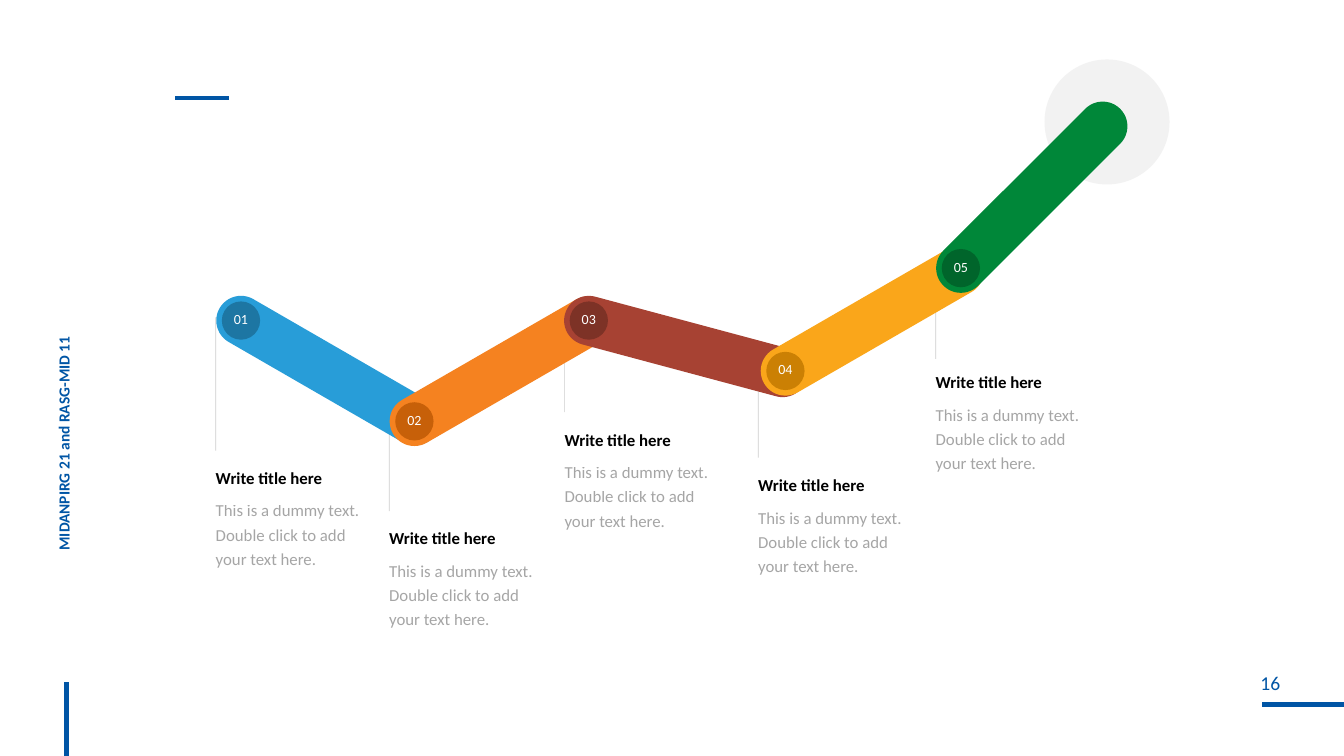
from dataclasses import dataclass
from math import cos, radians, sin

from lxml.etree import SubElement
from pptx import Presentation
from pptx.dml.color import RGBColor
from pptx.enum.shapes import MSO_CONNECTOR, MSO_SHAPE
from pptx.enum.text import MSO_ANCHOR, MSO_AUTO_SIZE, PP_ALIGN
from pptx.oxml.ns import qn
from pptx.util import Inches, Pt


@dataclass(frozen=True)
class Theme:
    font: str = "Calibri"
    brand: str = "0055A5"
    ink: str = "000000"
    muted: str = "808080"
    halo: str = "F2F2F2"
    white: str = "FFFFFF"
    number_size: int = 14
    label_size: int = 12
    side_size: int = 11
    badge_size: int = 10
    rule_width: float = 3
    stem_width: float = 0.5


@dataclass(frozen=True)
class Step:
    x: float  # centre of the joint
    y: float
    angle: int  # direction of the bar, clockwise degrees
    fill: str
    badge: str
    label_x: float
    label_y: float
    stem: float  # length of the line above the label
    gap: float = 0.08  # between that line and the label


THEME = Theme()
BAR_LENGTH, BAR_WIDTH = 1.99, 0.49
BADGE = 0.38
TITLE = "Write title here"
BODY = "This is a dummy text. Double click to add your text here."

STEPS = [
    Step(2.39, 3.18, 30, "289DD8", "1D76A3", 2.14, 4.55, 1.32),
    Step(4.11, 4.18, -30, "F58220", "C76009", 3.86, 5.15, 0.96),
    Step(5.84, 3.18, 15, "A74233", "7D3226", 5.6, 4.17, 0.96),
    Step(7.79, 3.68, -30, "FAA61A", "CB8004", 7.52, 4.62, 0.96),
    Step(9.53, 2.66, -45, "008739", "00652B", 9.28, 3.6, 0.96, 0.04),
]


def set_alpha(element, percent):
    """Make the solid colour inside an element partly transparent."""
    color = next(element.iter(qn("a:srgbClr")))
    SubElement(color, qn("a:alpha")).set("val", str(percent * 1000))


def add_line(s, x1, y1, x2, y2, color, width, alpha=None):
    line = s.shapes.add_connector(
        MSO_CONNECTOR.STRAIGHT, Inches(x1), Inches(y1), Inches(x2), Inches(y2))
    line.line.color.rgb = RGBColor.from_string(color)
    line.line.width = Pt(width)
    if alpha:
        set_alpha(line.line._ln, alpha)
    SubElement(line._element.spPr, qn("a:effectLst"))


def add_solid(s, kind, cx, cy, w, h, color):
    """Place a plain filled shape by its centre."""
    sp = s.shapes.add_shape(
        kind, Inches(cx - w / 2), Inches(cy - h / 2), Inches(w), Inches(h))
    sp.shadow.inherit = False
    sp.fill.solid()
    sp.fill.fore_color.rgb = RGBColor.from_string(color)
    sp.line.fill.background()
    return sp


def add_text_box(s, x, y, w, h, wrap=True):
    sp = s.shapes.add_textbox(Inches(x), Inches(y), Inches(w), Inches(h))
    sp.text_frame.word_wrap = wrap
    return sp


def set_insets(tf, vertical=0):
    tf.margin_left = tf.margin_right = 0
    tf.margin_top = tf.margin_bottom = Inches(vertical)


def style(p, size, color, bold=False, spacing=None, align=None):
    p.font.name = THEME.font
    p.font.size = Pt(size)
    p.font.bold = bold
    p.font.color.rgb = RGBColor.from_string(color)
    p.line_spacing = spacing
    p.alignment = align


def add_page_number(s, x, y, w, h):
    add_line(s, x + 0.52, y + h, 13.33, y + h, THEME.brand, THEME.rule_width)
    tf = add_text_box(s, x, y, w, h, wrap=False).text_frame
    set_insets(tf)
    p = tf.paragraphs[0]
    p.text = "16"
    style(p, THEME.number_size, THEME.brand, align=PP_ALIGN.CENTER)


def add_side_title(s, x, y, w, h):
    """Rotated title running up the left edge, above a short rule."""
    add_line(s, 0.66, 6.77, 0.66, 7.5, THEME.brand, THEME.rule_width)
    sp = add_text_box(s, x, y, w, h)
    sp.rotation = 270
    p = sp.text_frame.paragraphs[0]
    p.text = "MIDANPIRG 21 and RASG-MID 11"
    style(p, THEME.side_size, THEME.brand, bold=True, spacing=0.9)


def add_bar(s, step):
    turn = radians(step.angle)
    sp = add_solid(
        s, MSO_SHAPE.ROUNDED_RECTANGLE,
        step.x + BAR_LENGTH / 2 * cos(turn), step.y + BAR_LENGTH / 2 * sin(turn),
        BAR_LENGTH + BAR_WIDTH, BAR_WIDTH, step.fill)
    sp.adjustments[0] = 0.5
    sp.rotation = step.angle


def add_badge(s, step, number):
    sp = add_solid(s, MSO_SHAPE.OVAL, step.x, step.y, BADGE, BADGE, step.badge)
    tf = sp.text_frame
    set_insets(tf)
    tf.vertical_anchor = MSO_ANCHOR.MIDDLE
    p = tf.paragraphs[0]
    p.text = f"{number:02d}"
    style(p, THEME.badge_size, THEME.white, spacing=0.8, align=PP_ALIGN.CENTER)


def add_label(s, x, y, w, h):
    tf = add_text_box(s, x, y, w, h).text_frame
    tf.auto_size = MSO_AUTO_SIZE.SHAPE_TO_FIT_TEXT
    set_insets(tf, 0.05)
    p = tf.paragraphs[0]
    p.text = TITLE
    style(p, THEME.label_size, THEME.ink, bold=True, spacing=1.2)
    p = tf.add_paragraph()
    p.text = BODY
    style(p, THEME.label_size, THEME.muted, spacing=1.2)
    p.space_before = Pt(6)
    set_alpha(p._p, 70)


def add_path(s, steps):
    """Zigzag of bars with numbered joints and hanging labels."""
    for step in steps:
        bottom = step.label_y - step.gap
        add_line(s, step.label_x, bottom - step.stem, step.label_x, bottom,
                 THEME.ink, THEME.stem_width, alpha=20)
    add_solid(s, MSO_SHAPE.OVAL, 10.98, 1.21, 1.24, 1.24, THEME.halo)
    for step in steps:
        add_bar(s, step)
    for number, step in enumerate(steps, 1):
        add_badge(s, step, number)
    for step in steps:
        add_label(s, step.label_x, step.label_y, 1.47, 1.15)


def main():
    prs = Presentation()
    prs.slide_width, prs.slide_height = Inches(13.33), Inches(7.5)
    s = prs.slides.add_slide(prs.slide_layouts[6])

    # Frame of the page
    add_page_number(s, 12, 6.66, 1.2, 0.33)
    add_side_title(s, -1.9, 2.83, 5.14, 0.32)
    add_line(s, 1.74, 0.97, 2.27, 0.97, THEME.brand, THEME.rule_width)

    # Five-step path
    add_path(s, STEPS)
    prs.save("out.pptx")


if __name__ == "__main__":
    main()
